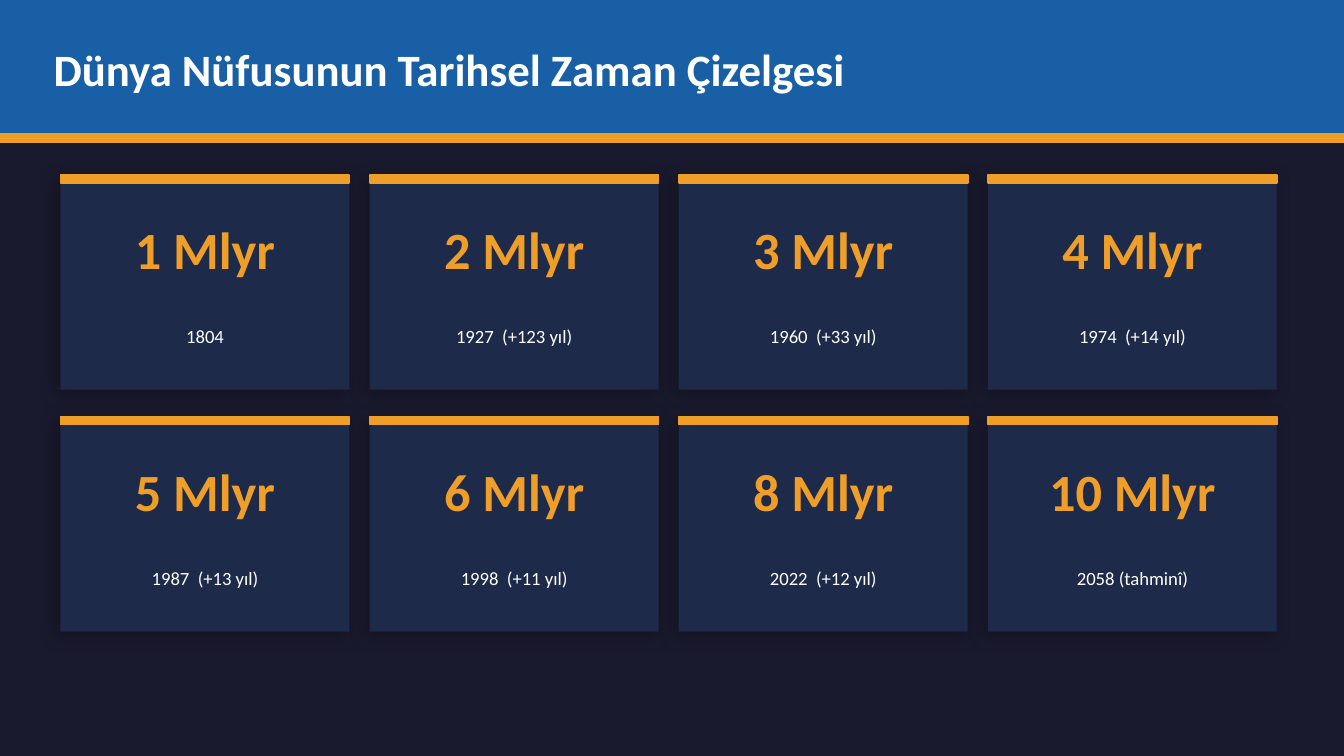
from lxml import etree
from pptx import Presentation
from pptx import util as u
from pptx.dml.color import RGBColor
from pptx.enum import shapes, text
from pptx.oxml import ns

WIDTH = 10
HEIGHT = WIDTH * 9 / 16
COLORS = {
    "background": "1A1A2E",
    "header": "185FA5",
    "accent": "EF9F27",
    "card": "1E2A4A",
    "white": "FFFFFF",
    "shadow": "000000",
}

# Card grid, in inches
COLUMNS = 4
LEFT, TOP = 0.45, 1.3
CARD_WIDTH, CARD_HEIGHT = 2.15, 1.6
COLUMN_STEP, ROW_STEP = 2.3, 1.8
STRIPE = 0.06
PADDING = 0.05

TITLE_FORMAT = {"size": u.Pt(24), "bold": True}
NUMBER_FORMAT = {"size": u.Pt(28), "bold": True}
YEAR_FORMAT = {"size": u.Pt(10), "bold": False}

MILESTONES = [
    ("1 Mlyr", "1804"),
    ("2 Mlyr", "1927  (+123 yıl)"),
    ("3 Mlyr", "1960  (+33 yıl)"),
    ("4 Mlyr", "1974  (+14 yıl)"),
    ("5 Mlyr", "1987  (+13 yıl)"),
    ("6 Mlyr", "1998  (+11 yıl)"),
    ("8 Mlyr", "2022  (+12 yıl)"),
    ("10 Mlyr", "2058 (tahminî)"),
]


def color(name):
    return RGBColor.from_string(COLORS[name])


def add_bar(slide, box, fill, outlined=True):
    """Add a plain rectangle, with a line of its own colour if outlined."""
    shape = slide.shapes.add_shape(
        shapes.MSO_SHAPE.RECTANGLE, *map(u.Inches, box))
    shape.shadow.inherit = False
    shape.fill.solid()
    shape.fill.fore_color.rgb = color(fill)
    if outlined:
        shape.line.color.rgb = color(fill)
        shape.line.width = u.Pt(1)
    else:
        shape.line.fill.background()
    return shape


def add_soft_shadow(shape):
    """Fill the empty effect list with a soft outer shadow."""
    effects = shape._element.spPr.find(ns.qn("a:effectLst"))
    shadow = etree.SubElement(
        effects, ns.qn("a:outerShdw"), blurRad=str(u.Pt(10)),
        dist=str(u.Pt(3)), dir=str(135 * 60000), algn="bl", rotWithShape="0")
    tint = etree.SubElement(shadow, ns.qn("a:srgbClr"), val=COLORS["shadow"])
    etree.SubElement(tint, ns.qn("a:alpha"), val="30000")


def add_label(slide, box, words, fill, font_format,
              align=text.PP_ALIGN.CENTER, inset=None):
    """Add one line of vertically centred text."""
    frame = slide.shapes.add_textbox(*map(u.Inches, box)).text_frame
    frame.word_wrap = True
    frame.vertical_anchor = text.MSO_ANCHOR.MIDDLE
    if inset is not None:
        for side in ("left", "top", "right", "bottom"):
            setattr(frame, f"margin_{side}", u.Inches(inset))
    paragraph = frame.paragraphs[0]
    paragraph.alignment = align
    run = paragraph.add_run()
    run.text = words
    for name, value in {"name": "Calibri", **font_format}.items():
        setattr(run.font, name, value)
    run.font.color.rgb = color(fill)


def add_header(slide, title):
    add_bar(slide, (0, 0, WIDTH, 1), "header")
    add_bar(slide, (0, 1, WIDTH, STRIPE), "accent")
    add_label(slide, (0.4, 0.1, WIDTH - 0.8, 0.82), title, "white",
              TITLE_FORMAT, text.PP_ALIGN.LEFT, inset=0)


def add_card(slide, index, number, year):
    row, column = divmod(index, COLUMNS)
    left = LEFT + column * COLUMN_STEP
    top = TOP + row * ROW_STEP
    card = add_bar(slide, (left, top, CARD_WIDTH, CARD_HEIGHT), "card",
                   outlined=False)
    add_soft_shadow(card)
    add_bar(slide, (left, top, CARD_WIDTH, STRIPE), "accent")

    text_left, text_width = left + PADDING, CARD_WIDTH - 2 * PADDING
    add_label(slide, (text_left, top + 0.15, text_width, 0.8), number,
              "accent", NUMBER_FORMAT)
    add_label(slide, (text_left, top + 0.95, text_width, 0.5), year,
              "white", YEAR_FORMAT)


def main():
    presentation = Presentation()
    presentation.slide_width = u.Inches(WIDTH)
    presentation.slide_height = u.Inches(HEIGHT)
    slide = presentation.slides.add_slide(presentation.slide_layouts[6])
    slide.background.fill.solid()
    slide.background.fill.fore_color.rgb = color("background")

    # Title band
    add_header(slide, "Dünya Nüfusunun Tarihsel Zaman Çizelgesi")

    # Population milestones
    for index, (number, year) in enumerate(MILESTONES):
        add_card(slide, index, number, year)

    presentation.save("out.pptx")


if __name__ == "__main__":
    main()
